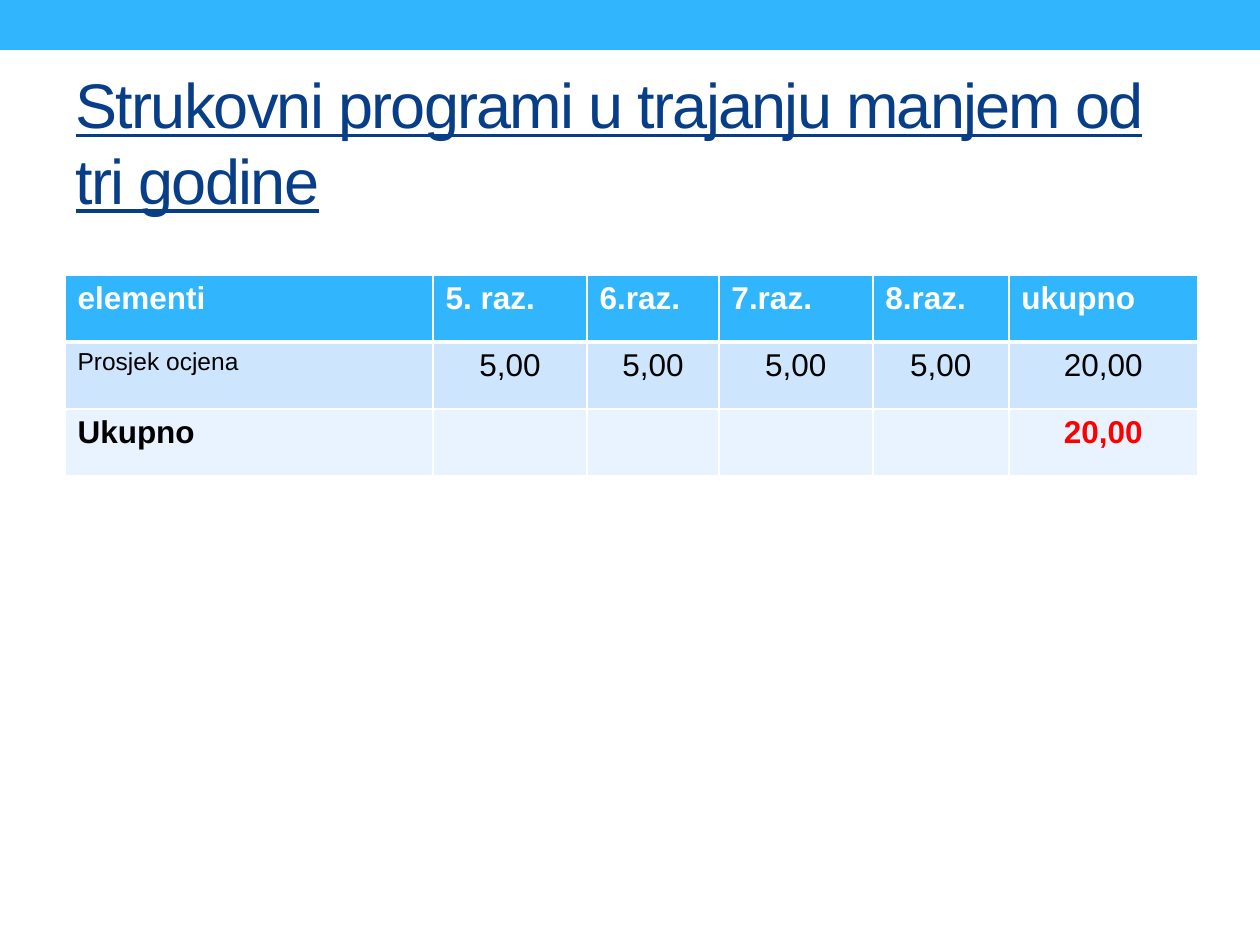
import pptx
import pptx.dml.color
import pptx.enum.shapes
import pptx.enum.text
import pptx.oxml.ns
import pptx.util
from lxml import etree

RGBColor = pptx.dml.color.RGBColor
PP_ALIGN = pptx.enum.text.PP_ALIGN
Pt = pptx.util.Pt

SKY = RGBColor(0x31, 0xB6, 0xFD)
NAVY = RGBColor(0x07, 0x3E, 0x87)
BAND_DARK = RGBColor(0xCE, 0xE5, 0xFE)
BAND_LIGHT = RGBColor(0xE8, 0xF3, 0xFF)
WHITE = RGBColor(0xFF, 0xFF, 0xFF)
BLACK = RGBColor(0x00, 0x00, 0x00)
RED = RGBColor(0xFF, 0x00, 0x00)

FONT = "Arial"
PX_PER_INCH = 126

COLUMN_WIDTHS = [368, 154, 132, 154, 136, 189]
ROW_HEIGHT = 67
GRADES = [
    ["elementi", "5. raz.", "6.raz.", "7.raz.", "8.raz.", "ukupno"],
    ["Prosjek ocjena", "5,00", "5,00", "5,00", "5,00", "20,00"],
    ["Ukupno", "", "", "", "", "20,00"],
]
ROW_FILLS = [SKY, BAND_DARK, BAND_LIGHT]


def px(n):
    return round(n * 914400 / PX_PER_INCH)


def add_run(p, text, size, color, bold=False):
    r = p.add_run()
    r.text = text
    r.font.name = FONT
    r.font.size = Pt(size)
    r.font.bold = bold
    r.font.color.rgb = color
    return r


def add_top_band(slide, x, y, w, h):
    sp = slide.shapes.add_shape(
        pptx.enum.shapes.MSO_SHAPE.RECTANGLE, px(x), px(y), px(w), px(h))
    sp.shadow.inherit = False
    sp.fill.solid()
    sp.fill.fore_color.rgb = SKY
    sp.line.fill.background()


def add_title(slide, x, y, w, h):
    sp = slide.shapes.title
    sp.left, sp.top, sp.width, sp.height = px(x), px(y), px(w), px(h)
    tf = sp.text_frame
    tf.word_wrap = True
    tf.auto_size = pptx.enum.text.MSO_AUTO_SIZE.NONE
    tf.vertical_anchor = pptx.enum.text.MSO_ANCHOR.MIDDLE
    p = tf.paragraphs[0]
    p.alignment = PP_ALIGN.LEFT
    r = add_run(p, "Strukovni programi u trajanju manjem od tri godine", 36, NAVY)
    r.font.underline = True
    r.font._element.set("spc", "-100")


def set_borders(cell, widths):
    """Draw white borders; widths maps a side (L, R, T, B) to points."""
    qn = pptx.oxml.ns.qn
    tcPr = cell._tc.get_or_add_tcPr()
    for side, width in widths.items():
        ln = etree.SubElement(tcPr, qn(f"a:ln{side}"), w=str(Pt(width)))
        fill = etree.SubElement(ln, qn("a:solidFill"))
        etree.SubElement(fill, qn("a:srgbClr"), val=str(WHITE))


def cell_style(row, col):
    """Return size, colour, bold and alignment for a cell."""
    if row == 0:
        return 18, WHITE, True, PP_ALIGN.LEFT
    is_total = row == len(GRADES) - 1
    if col == 0:
        return (18 if is_total else 14), BLACK, is_total, PP_ALIGN.LEFT
    return 18, (RED if is_total else BLACK), is_total, PP_ALIGN.CENTER


def add_grades_table(slide, x, y):
    table = slide.shapes.add_table(
        len(GRADES), len(COLUMN_WIDTHS), px(x), px(y),
        px(sum(COLUMN_WIDTHS)), px(ROW_HEIGHT * len(GRADES))).table
    for column, width in zip(table.columns, COLUMN_WIDTHS):
        column.width = px(width)
    for i, (texts, fill) in enumerate(zip(GRADES, ROW_FILLS)):
        table.rows[i].height = px(ROW_HEIGHT)
        for j, text in enumerate(texts):
            cell = table.cell(i, j)
            set_borders(cell, {"L": 1, "R": 1, "T": 3 if i == 1 else 1,
                               "B": 3 if i == 0 else 1})
            cell.fill.solid()
            cell.fill.fore_color.rgb = fill
            if text:
                size, color, bold, align = cell_style(i, j)
                p = cell.text_frame.paragraphs[0]
                p.alignment = align
                add_run(p, text, size, color, bold)


def main():
    prs = pptx.Presentation()
    prs.slide_width, prs.slide_height = px(1260), px(945)
    slide = prs.slides.add_slide(prs.slide_layouts.get_by_name("Title Only"))
    add_top_band(slide, 0, 0, 1260, 50)
    add_title(slide, 63, 73, 1134, 136)
    add_grades_table(slide, 65, 275)
    prs.save("out.pptx")


if __name__ == "__main__":
    main()
